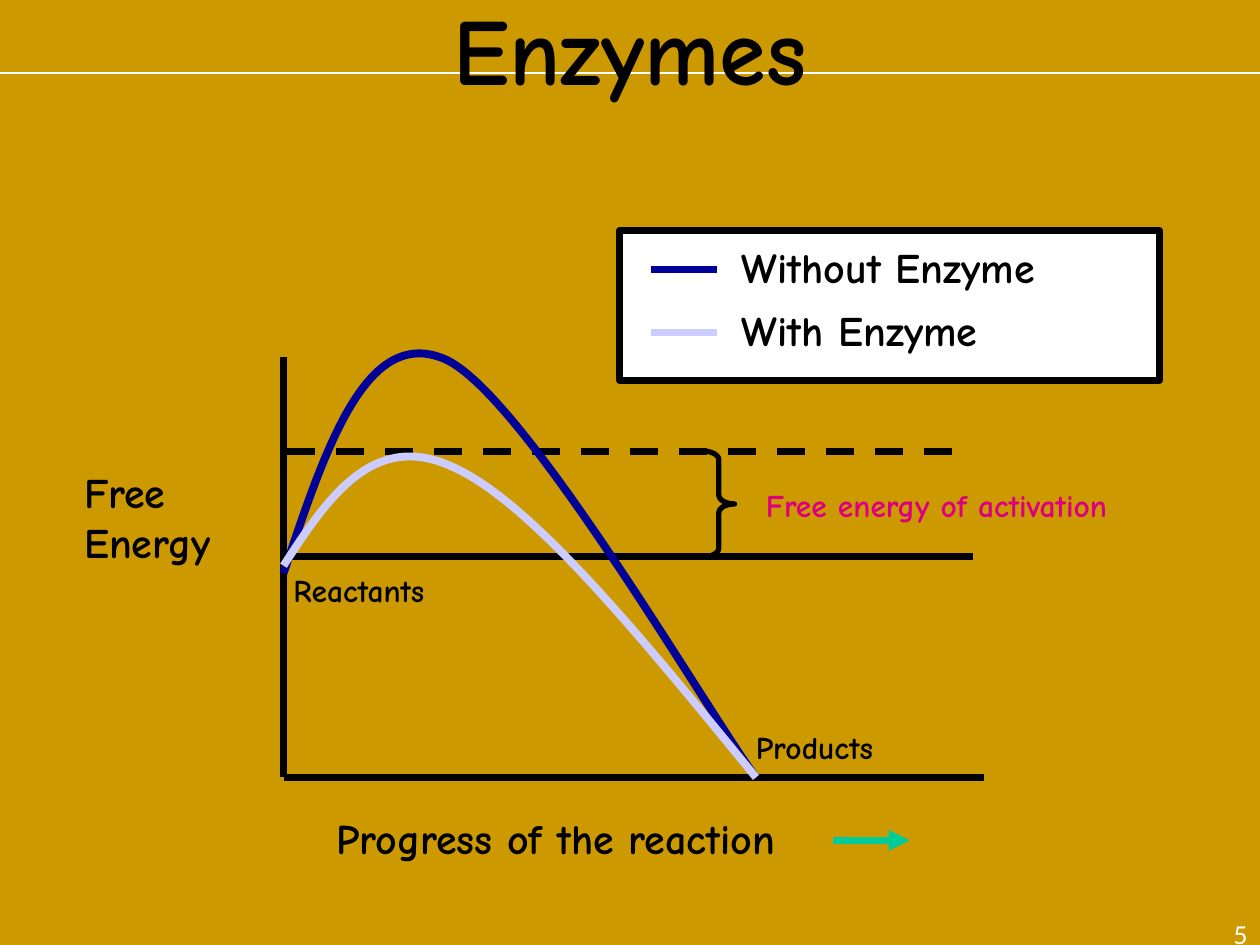
import lxml.etree
import pptx
import pptx.dml.color
import pptx.enum.dml
import pptx.enum.shapes
import pptx.enum.text
import pptx.oxml.ns
import pptx.util

Inches = pptx.util.Inches
qn = pptx.oxml.ns.qn
ALIGN = pptx.enum.text.PP_ALIGN
SHAPES = pptx.enum.shapes.MSO_SHAPE
COLORS = {
    "background": "CC9900",
    "ink": "000000",
    "white": "FFFFFF",
    "without": "000099",
    "with": "CCCCFF",
    "arrow": "00CC99",
    "activation": "DC0081",
}


def color(name):
    """Return the named colour."""
    return pptx.dml.color.RGBColor.from_string(COLORS[name])


def add_label(slide, box, text, size, ink="ink", font="Comic Neue", bold=True,
              align=ALIGN.LEFT, wrap=False):
    """Add a text box with one style for all its lines."""
    label = slide.shapes.add_textbox(*map(Inches, box))
    frame = label.text_frame
    frame.word_wrap = wrap
    frame.text = text
    for para in frame.paragraphs:
        para.alignment = align
        for span in para.runs:
            span.font.name = font
            span.font.size = pptx.util.Pt(size)
            span.font.bold = bold
            span.font.color.rgb = color(ink)
    return label


def add_line(slide, start, end, ink="ink", width=4):
    """Add a straight line without a shadow."""
    line = slide.shapes.add_connector(
        pptx.enum.shapes.MSO_CONNECTOR.STRAIGHT, *map(Inches, start + end))
    line.line.color.rgb = color(ink)
    line.line.width = pptx.util.Pt(width)
    lxml.etree.SubElement(line._element.spPr, qn("a:effectLst"))
    return line


def add_curve(slide, start, points, ink):
    """Add an open Bezier curve, three points to a segment."""
    builder = slide.shapes.build_freeform(
        Inches(start[0]), Inches(start[1]), scale=1.0)
    builder.add_line_segments(
        [(Inches(x), Inches(y)) for x, y in points], close=False)
    curve = builder.convert_to_shape()
    outline = curve._element.find(".//" + qn("a:path"))
    steps = outline.findall(qn("a:lnTo"))
    for first in range(0, len(steps), 3):
        segment = lxml.etree.SubElement(outline, qn("a:cubicBezTo"))
        for step in steps[first:first + 3]:
            segment.append(step[0])
            outline.remove(step)
    curve.fill.background()
    curve.line.color.rgb = color(ink)
    curve.line.width = pptx.util.Pt(4.5)
    curve.shadow.inherit = False


def add_heading(slide, box):
    """Place the title across the rule that spans the page."""
    left, top, width, height = box
    add_line(slide, (left, top + 0.58), (left + width, top + 0.58), "white", 1)
    title = add_label(slide, box, "Enzymes", 54, align=ALIGN.CENTER, wrap=True)
    title.text_frame.vertical_anchor = pptx.enum.text.MSO_ANCHOR.MIDDLE


def add_diagram(slide, box):
    """Draw axes, energy levels, labels and brace in the plot box."""
    left, top, width, height = box
    right, bottom = left + width, top + height
    upper, lower = top + 0.75, top + 1.59
    add_line(slide, (left, top), (left, bottom))
    add_line(slide, (left, bottom), (right, bottom))
    add_label(slide, (left - 1.68, top + 0.82, 1.33, 0.9), "Free\nEnergy", 24)
    add_label(slide, (left + 0.32, bottom + 0.23, 4.03, 0.5),
              "Progress of the reaction", 24)
    arrow = add_line(slide, (left + 4.36, bottom + 0.5),
                     (left + 4.97, bottom + 0.5), "arrow")
    lxml.etree.SubElement(
        arrow.line._get_or_add_ln(), qn("a:tailEnd"), type="triangle")
    add_line(slide, (left + 0.03, lower), (right - 0.09, lower))
    level = add_line(slide, (left + 0.03, upper), (right - 0.09, upper))
    level.line.dash_style = pptx.enum.dml.MSO_LINE.DASH
    add_label(slide, (left - 0.02, lower + 0.06, 1.39, 0.4), "Reactants", 18)
    add_label(slide, (left + 3.65, bottom - 0.44, 1.28, 0.4), "Products", 18)
    add_label(slide, (left + 3.73, upper + 0.23, 3.16, 0.4),
              "Free energy of activation", 18, "activation")
    brace = slide.shapes.add_shape(
        SHAPES.RIGHT_BRACE, Inches(left + 3.33), Inches(upper),
        Inches(0.25), Inches(lower - upper))
    brace.adjustments[0] = 0.28
    brace.fill.background()
    brace.line.color.rgb = color("ink")
    brace.line.width = pptx.util.Pt(3)
    brace.shadow.inherit = False


def add_legend(slide, box):
    """Draw the framed legend with one row per curve."""
    left, top, width, height = box
    frame = slide.shapes.add_shape(SHAPES.RECTANGLE, *map(Inches, box))
    frame.fill.solid()
    frame.fill.fore_color.rgb = color("white")
    frame.line.color.rgb = color("ink")
    frame.line.width = pptx.util.Pt(4)
    frame.shadow.inherit = False
    entries = [("Without Enzyme", "without", 2.83), ("With Enzyme", "with", 2.32)]
    for row, (text, ink, label_width) in enumerate(entries):
        middle = top + 0.31 + 0.5 * row
        add_line(slide, (left + 0.25, middle), (left + 0.77, middle), ink)
        add_label(slide, (left + 0.87, middle - 0.27, label_width, 0.5), text, 24)


def add_curves(slide, box):
    """Draw both reaction curves, ending at the same products."""
    left, top, width, height = box
    end = (left + width, top + height)
    curves = [
        ("without", 1.97, [(0.33, 0.99), (0.65, 0), (1.28, 0.27),
                           (1.9, 0.54), (3.34, 3.03)]),
        ("with", 1.91, [(0.35, 1.37), (0.71, 0.84), (1.33, 1.12),
                        (1.96, 1.39), (2.85, 2.49)]),
    ]
    for ink, start, offsets in curves:
        points = [(left + x, top + y) for x, y in offsets] + [end]
        add_curve(slide, (left, top + start), points, ink)


def main():
    """Build the deck and save it."""
    deck = pptx.Presentation()
    deck.slide_width, deck.slide_height = Inches(10), Inches(7.5)
    page = deck.slides.add_slide(deck.slide_layouts[6])
    page.background.fill.solid()
    page.background.fill.fore_color.rgb = color("background")
    add_heading(page, (0, 0, 10, 0.75))
    add_label(page, (7.92, 7.25, 2.08, 0.25), "5", 14, "white", "Lato",
              bold=False, align=ALIGN.RIGHT, wrap=True)
    add_diagram(page, (2.25, 2.83, 5.56, 3.34))
    add_legend(page, (4.92, 1.83, 4.28, 1.19))
    add_curves(page, (2.25, 2.58, 3.75, 3.59))
    deck.save("out.pptx")


if __name__ == "__main__":
    main()
